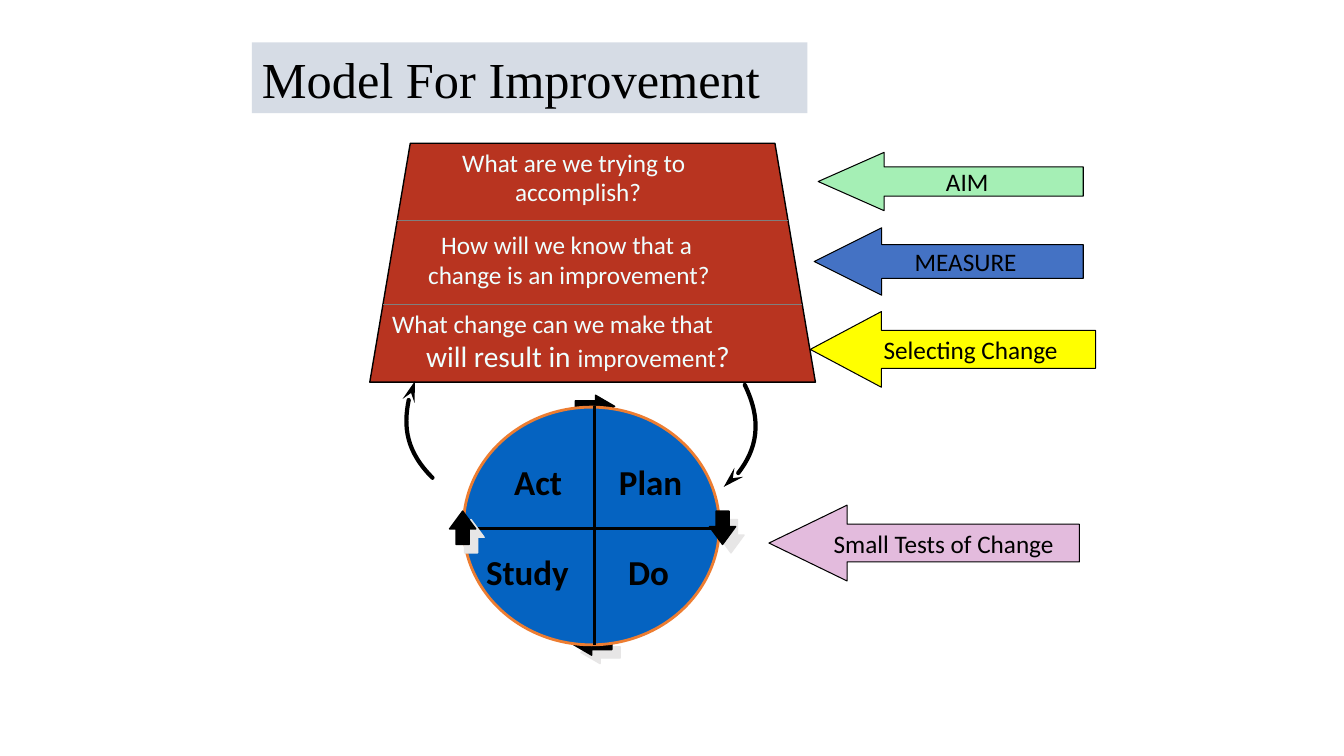
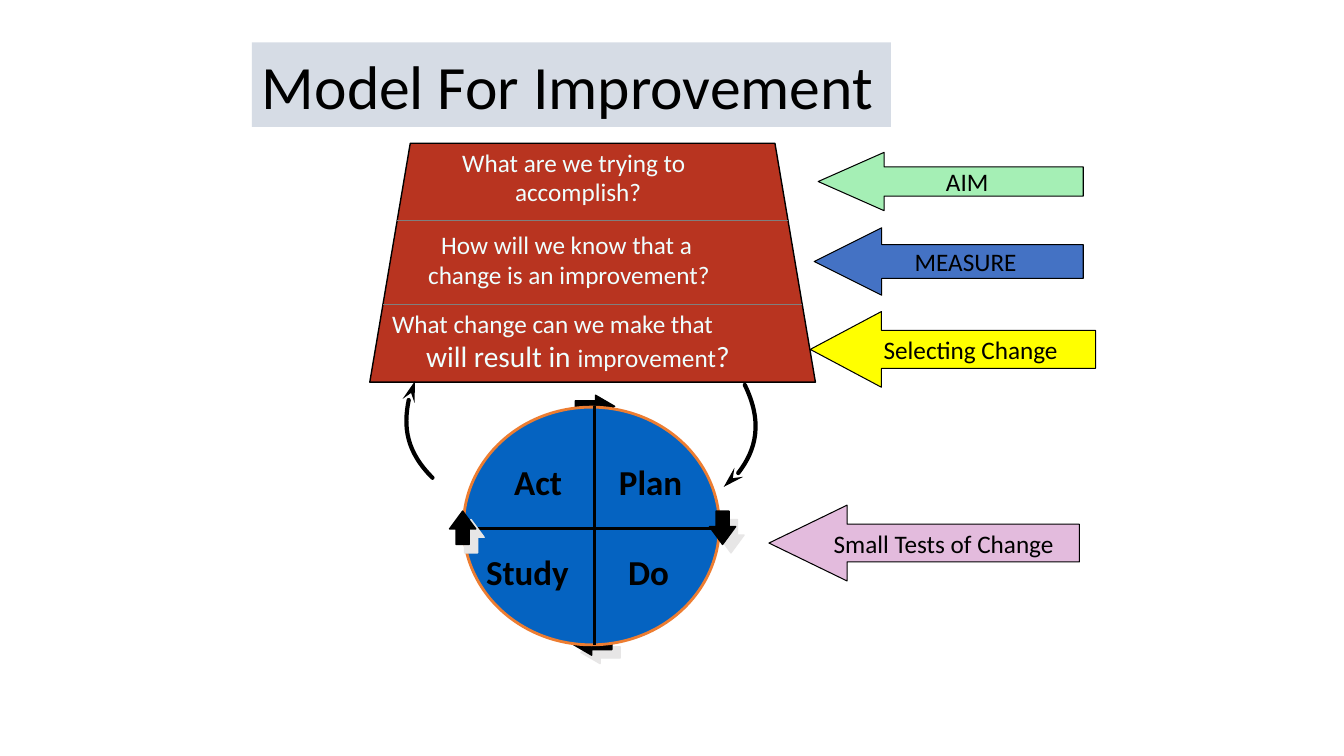
"""Build two slides of the Model For Improvement, each with its own title style."""
from dataclasses import dataclass

from lxml.etree import SubElement
from pptx import Presentation
from pptx.dml.color import RGBColor
from pptx.enum.shapes import MSO_CONNECTOR, MSO_SHAPE
from pptx.enum.text import MSO_ANCHOR, MSO_AUTO_SIZE, PP_ALIGN
from pptx.oxml.ns import qn
from pptx.util import Cm, Pt


@dataclass(frozen=True)
class Theme:
    ink: str = "000000"
    band: str = "D6DCE5"
    question_fill: str = "B83420"
    question_text: str = "EFFFFF"
    divider: str = "7F7F7F"
    wheel: str = "0563C1"
    rim: str = "ED7D31"
    shade: str = "E7E6E6"
    aim: str = "A5EFB5"
    measure: str = "4472C4"
    change: str = "FFFF00"
    tests: str = "E3BBDD"
    font: str = "Calibri"
    title_serif: str = "Times New Roman"
    body: int = 18
    emphasis: int = 21
    phase: int = 25


THEME = Theme()
TEXT_HEIGHT = 1.02
PHASE_HEIGHT = 1.24

TITLES = [
    (14, 1.78, THEME.title_serif, 36),
    (16.1, 2.13, THEME.font, 44),
]
TRAPEZOID = [(10.34, 3.61), (19.53, 3.61), (20.55, 9.63), (9.32, 9.63)]
DIVIDERS = [5.56, 7.68]
QUESTIONS = [
    (11.4, 3.58, 6.2, [("What are we trying to", THEME.body)]),
    (12.73, 4.32, 3.73, [("accomplish?", THEME.body)]),
    (10.87, 5.66, 6.91, [("How will we know that a", THEME.body)]),
    (10.54, 6.4, 7.7, [("change is an improvement?", THEME.body)]),
    (9.63, 7.65, 8.6, [("What change can we make that", THEME.body)]),
    (10.49, 8.38, 8.26, [("will result in ", THEME.emphasis),
                         ("improvement", THEME.body),
                         ("?", THEME.emphasis)]),
]
HIDDEN_TURNS = [
    (MSO_SHAPE.RIGHT_ARROW, (14.5, 9.96, 0.99, 0.56), 0.86),
    (MSO_SHAPE.LEFT_ARROW, (14.43, 15.95, 0.99, 0.56), 0.86),
]
SIDE_TURNS = [
    (MSO_SHAPE.DOWN_ARROW, (17.88, 12.88, 0.66, 0.84), 0.68),
    (MSO_SHAPE.UP_ARROW, (11.33, 12.88, 0.66, 0.84), 0.68),
]
PHASES = [
    (12.78, 11.53, 1.57, "Act"),
    (15.42, 11.53, 1.98, "Plan"),
    (12.07, 13.79, 2.46, "Study"),
    (15.65, 13.79, 1.4, "Do"),
]
LOOPS = [
    [(10.9, 12.04), (10.24, 11.38), (10.08, 10.41), (10.46, 9.6)],
    [(18.77, 9.7), (19.23, 10.64), (19, 11.73), (18.24, 12.27)],
]
STEPS = [
    ("AIM", (20.62, 3.84, 6.68, 1.47), 1.13, THEME.aim),
    ("MEASURE", (20.52, 5.74, 6.78, 1.7), 1, THEME.measure),
    ("Selecting Change", (20.42, 7.85, 7.19, 1.91), 0.94, THEME.change),
    ("Small Tests of Change", (19.38, 12.73, 7.82, 1.91), 1.03, THEME.tests),
]


class Deck:
    def __init__(self, theme):
        self.theme = theme
        self.presentation = Presentation()
        self.presentation.slide_width = Cm(33.87)
        self.presentation.slide_height = Cm(19.05)
        self.slide = None

    def style_run(self, run, size, color, font=None, bold=False):
        run.font.name = font or self.theme.font
        run.font.size = Pt(size)
        run.font.bold = bold
        run.font.color.rgb = RGBColor.from_string(color)

    def set_insets(self, frame, side, top):
        frame.margin_left = frame.margin_right = Cm(side)
        frame.margin_top = frame.margin_bottom = Cm(top)

    def paint(self, shape, fill, line, width):
        shape.shadow.inherit = False
        if fill:
            shape.fill.solid()
            shape.fill.fore_color.rgb = RGBColor.from_string(fill)
        else:
            shape.fill.background()
        shape.line.color.rgb = RGBColor.from_string(line)
        shape.line.width = Pt(width)

    def new_slide(self, title, width, height, font, size):
        layout = self.presentation.slide_layouts[5]
        self.slide = self.presentation.slides.add_slide(layout)
        heading = self.slide.shapes.title
        heading.left, heading.top = Cm(6.35), Cm(1.07)
        heading.width, heading.height = Cm(width), Cm(height)
        heading.fill.solid()
        heading.fill.fore_color.rgb = RGBColor.from_string(self.theme.band)
        frame = heading.text_frame
        frame.text = title
        frame.word_wrap = True
        frame.auto_size = MSO_AUTO_SIZE.NONE
        frame.vertical_anchor = MSO_ANCHOR.TOP
        self.set_insets(frame, 0.25, 0.13)
        frame.paragraphs[0].alignment = PP_ALIGN.LEFT
        self.style_run(frame.paragraphs[0].runs[0], size, self.theme.ink, font)

    def add_text(self, box, parts, color, bold=False, insets=(0.25, 0.13)):
        label = self.slide.shapes.add_textbox(*map(Cm, box))
        frame = label.text_frame
        frame.word_wrap = False
        self.set_insets(frame, *insets)
        for words, size in parts:
            run = frame.paragraphs[0].add_run()
            run.text = words
            self.style_run(run, size, color, bold=bold)

    def add_line(self, start, end, color, width):
        line = self.slide.shapes.add_connector(
            MSO_CONNECTOR.STRAIGHT, *map(Cm, (*start, *end)))
        line.line.color.rgb = RGBColor.from_string(color)
        line.line.width = Pt(width)
        SubElement(line._element.spPr, qn("a:effectLst"))

    def add_preset(self, preset, box, fill, line, width):
        shape = self.slide.shapes.add_shape(preset, *map(Cm, box))
        self.paint(shape, fill, line, width)
        return shape

    def add_outline(self, points, closed):
        start, *rest = [(Cm(x), Cm(y)) for x, y in points]
        builder = self.slide.shapes.build_freeform(*start)
        builder.add_line_segments(rest, close=closed)
        return builder.convert_to_shape()

    def add_turn(self, preset, box, head):
        turn = self.add_preset(preset, box, self.theme.ink, self.theme.ink, 1)
        turn.adjustments[1] = head
        effects = turn._element.spPr.find(qn("a:effectLst"))
        shadow = SubElement(effects, qn("a:outerShdw"), blurRad="0",
                            dist=str(Pt(8.5)), dir="2700000", algn="ctr",
                            rotWithShape="0")
        SubElement(shadow, qn("a:srgbClr"), val=self.theme.shade)

    def add_loop(self, points):
        loop = self.add_outline(points, closed=False)
        self.paint(loop, None, self.theme.ink, 3)
        properties = loop._element.spPr
        route = next(properties.iter(qn("a:path")))
        segments = route.findall(qn("a:lnTo"))
        curve = SubElement(route, qn("a:cubicBezTo"))
        for segment in segments:
            curve.append(segment[0])
            route.remove(segment)
        stroke = properties.find(qn("a:ln"))
        stroke.set("cap", "rnd")
        SubElement(stroke, qn("a:tailEnd"), type="stealth", w="med", len="lg")

    def add_step(self, words, box, head, fill):
        step = self.add_preset(MSO_SHAPE.LEFT_ARROW, box, fill, self.theme.ink, 0.75)
        step.adjustments[1] = head
        frame = step.text_frame
        frame.text = words
        frame.word_wrap = False
        frame.vertical_anchor = MSO_ANCHOR.MIDDLE
        frame.paragraphs[0].alignment = PP_ALIGN.CENTER
        self.style_run(frame.paragraphs[0].runs[0], self.theme.body, self.theme.ink)

    def add_questions(self):
        panel = self.add_outline(TRAPEZOID, closed=True)
        self.paint(panel, self.theme.question_fill, self.theme.ink, 1)
        (top_left, top), (top_right, _), (low_right, bottom), (low_left, _) = TRAPEZOID
        for y in DIVIDERS:
            share = (y - top) / (bottom - top)
            left = top_left + share * (low_left - top_left)
            right = top_right + share * (low_right - top_right)
            self.add_line((left, y), (right, y), self.theme.divider, 1)
        for left, y, width, parts in QUESTIONS:
            self.add_text((left, y, width, TEXT_HEIGHT), parts,
                          self.theme.question_text)

    def add_cycle(self):
        for turn in HIDDEN_TURNS:
            self.add_turn(*turn)
        self.add_preset(MSO_SHAPE.OVAL, (11.68, 10.26, 6.45, 5.99),
                        self.theme.wheel, self.theme.rim, 2)
        self.add_line((14.99, 10.24), (14.99, 16.26), self.theme.ink, 2)
        for left, top, width, words in PHASES:
            self.add_text((left, top, width, PHASE_HEIGHT),
                          [(words, self.theme.phase)], self.theme.ink,
                          bold=True, insets=(0.18, 0.08))
        self.add_line((11.63, 13.31), (18.42, 13.31), self.theme.ink, 2)
        for turn in SIDE_TURNS:
            self.add_turn(*turn)
        for loop in LOOPS:
            self.add_loop(loop)


def main():
    deck = Deck(THEME)
    for title_style in TITLES:
        deck.new_slide("Model For Improvement", *title_style)
        deck.add_questions()
        deck.add_cycle()
        for step in STEPS:
            deck.add_step(*step)
    deck.presentation.save("out.pptx")


if __name__ == "__main__":
    main()
